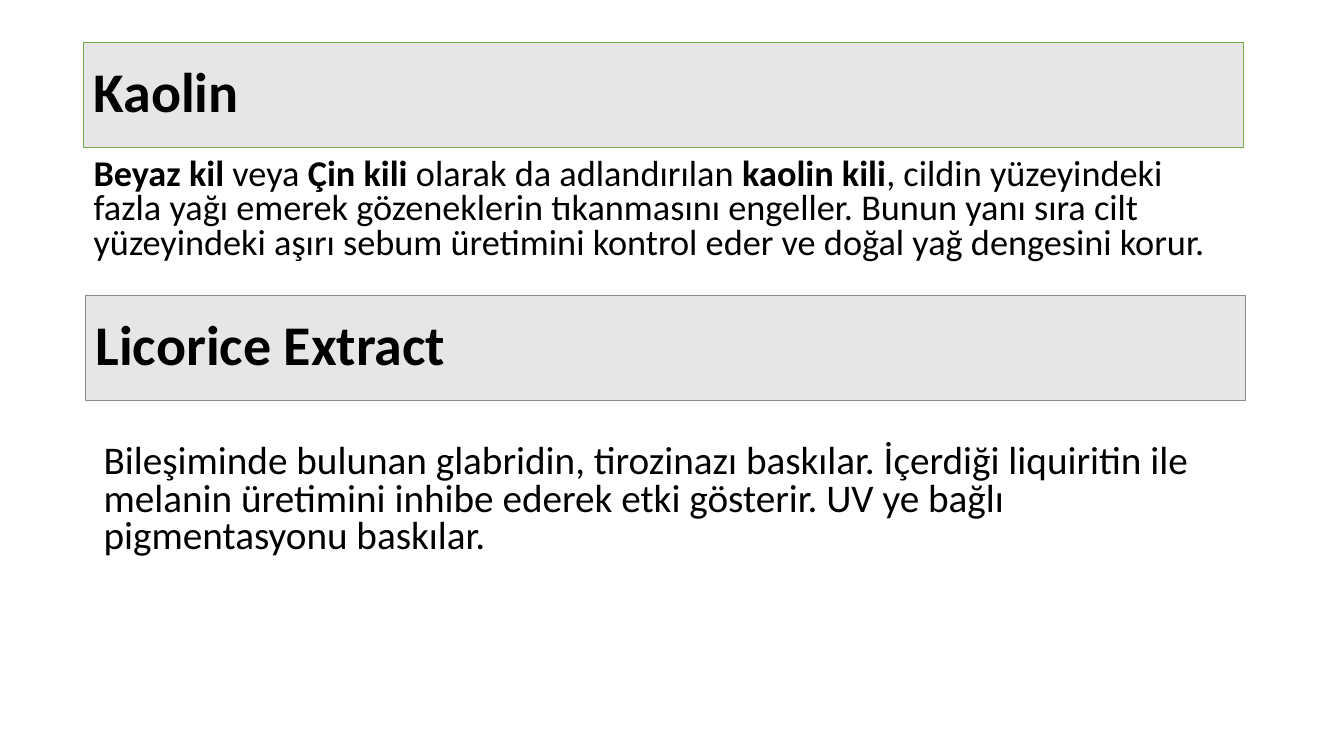
from pptx import Presentation
from pptx.dml.color import RGBColor
from pptx.enum import shapes, text
from pptx.util import Inches, Pt

BLACK = RGBColor(0x00, 0x00, 0x00)
PALE_GREY = RGBColor(0xE7, 0xE6, 0xE6)
GREEN = RGBColor(0x70, 0xAD, 0x47)
MID_GREY = RGBColor(0x8C, 0x8C, 0x8C)

WIDTH = 11.5
HEADING_HEIGHT = 1.04
BODY_HEIGHT = 1.32


def write_text(shape, runs, size, line_spacing, space_before, anchor):
    """Fill a shape with one paragraph made of (text, bold) runs."""
    frame = shape.text_frame
    frame.word_wrap = True
    frame.vertical_anchor = anchor
    paragraph = frame.paragraphs[0]
    paragraph.alignment = text.PP_ALIGN.LEFT
    paragraph.line_spacing = line_spacing
    paragraph.space_before = Pt(space_before)
    for words, bold in runs:
        run = paragraph.add_run()
        run.text = words
        run.font.name = "Calibri"
        run.font.size = Pt(size)
        run.font.bold = bold
        run.font.color.rgb = BLACK


presentation = Presentation()
presentation.slide_width = Inches(13.33)
presentation.slide_height = Inches(7.5)
slide = presentation.slides.add_slide(presentation.slide_layouts[6])

# Heading bars
headings = [
    ("Kaolin", 0.83, 0.42, GREEN),
    ("Licorice Extract", 0.85, 2.93, MID_GREY),
]
for title, left, top, border in headings:
    bar = slide.shapes.add_shape(
        shapes.MSO_SHAPE.RECTANGLE,
        Inches(left), Inches(top), Inches(WIDTH), Inches(HEADING_HEIGHT))
    bar.shadow.inherit = False
    bar.fill.solid()
    bar.fill.fore_color.rgb = PALE_GREY
    bar.line.color.rgb = border
    bar.line.width = Pt(0.5)
    write_text(bar, [(title, True)], size=40, line_spacing=0.9,
               space_before=0, anchor=text.MSO_ANCHOR.MIDDLE)

# Descriptions
kaolin_runs = [
    ("Beyaz kil", True),
    (" veya ", False),
    ("Çin kili", True),
    (" olarak da adlandırılan ", False),
    ("kaolin kili", True),
    (", cildin yüzeyindeki fazla yağı emerek gözeneklerin tıkanmasını engeller. "
     "Bunun yanı sıra cilt yüzeyindeki aşırı sebum üretimini kontrol eder ve "
     "doğal yağ dengesini korur.", False),
]
licorice_runs = [
    ("Bileşiminde bulunan glabridin, tirozinazı baskılar. İçerdiği liquiritin ile "
     "melanin üretimini inhibe ederek etki gösterir. UV ye bağlı pigmentasyonu "
     "baskılar.", False),
]
descriptions = [
    (kaolin_runs, 0.83, 1.52, 25.9),
    (licorice_runs, 0.93, 4.36, 28),
]
for runs, left, top, size in descriptions:
    box = slide.shapes.add_textbox(
        Inches(left), Inches(top), Inches(WIDTH), Inches(BODY_HEIGHT))
    write_text(box, runs, size=size, line_spacing=0.8,
               space_before=10, anchor=text.MSO_ANCHOR.TOP)

presentation.save("out.pptx")
